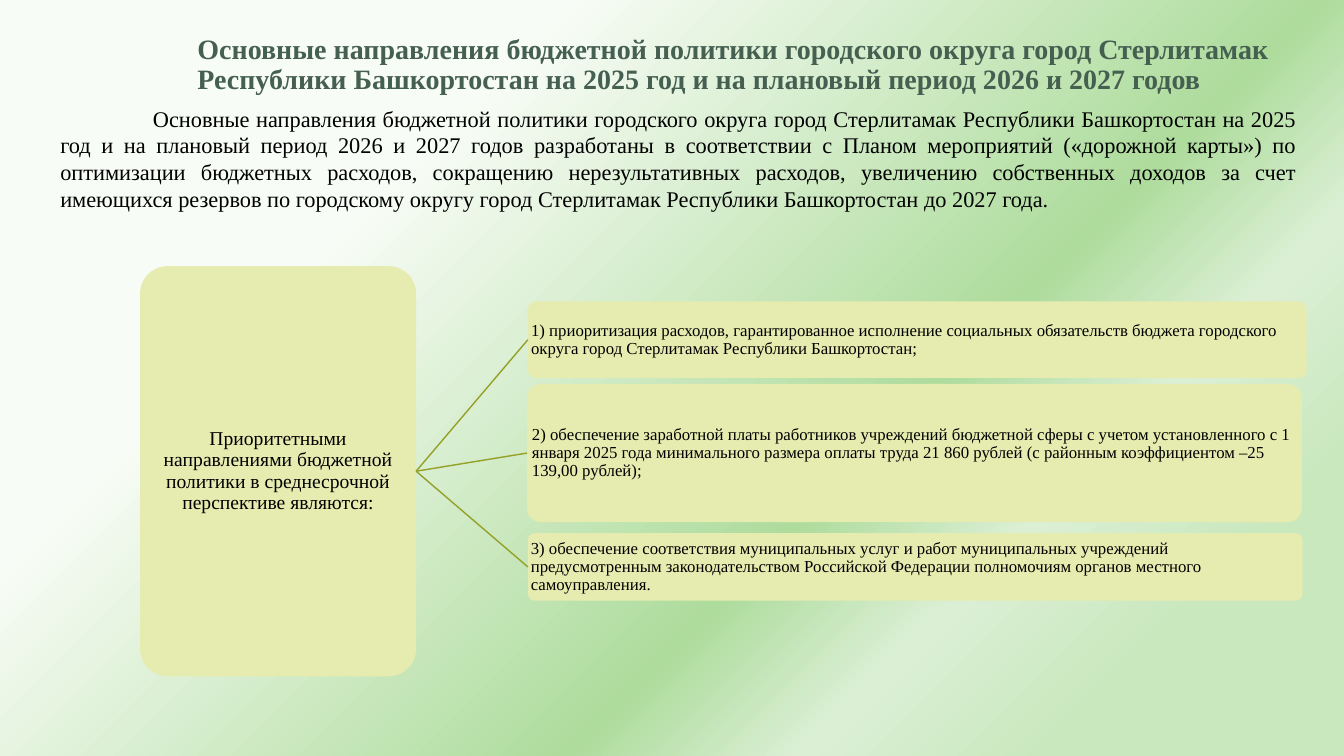
"""Build a slide on the budget policy priorities of Sterlitamak."""
import copy

import pptx
import pptx.util
from pptx.dml.color import RGBColor
from pptx.enum.shapes import MSO_CONNECTOR, MSO_SHAPE
from pptx.enum.text import MSO_ANCHOR, MSO_AUTO_SIZE, PP_ALIGN
from pptx.oxml.ns import qn

color = RGBColor.from_string
deck = pptx.Presentation()
deck.slide_width = pptx.util.Inches(13.34)
deck.slide_height = pptx.util.Inches(7.5)
page = deck.slides.add_slide(deck.slide_layouts[5])


def area(left, top, width, height):
    """Turn percentages of the slide's size into lengths."""
    across, down = deck.slide_width / 100, deck.slide_height / 100
    return [int(left * across), int(top * down), int(width * across), int(height * down)]


def write(frame, text, size, align, spacing=0.9, ink="000000", bold=False):
    """Fill a text frame with one formatted paragraph."""
    frame.word_wrap = True
    frame.auto_size = MSO_AUTO_SIZE.NONE
    para = frame.paragraphs[0]
    para.alignment = align
    para.line_spacing = spacing
    span = para.add_run()
    span.text = text
    span.font.name = "Times New Roman"
    span.font.size = pptx.util.Pt(size)
    span.font.bold = bold
    span.font.color.rgb = color(ink)
    return para


backdrop = page.background.fill
backdrop.gradient()
backdrop.gradient_angle = 315
stop_list = backdrop.gradient_stops[0]._gs.getparent()
for extra in range(2):
    stop_list.append(copy.deepcopy(stop_list[0]))
shades = [(0.27, "F8FCF6"), (0.63, "AEDC9D"), (0.74, "DBEFD4"), (0.86, "C9E8BE")]
for stop, (position, shade) in zip(backdrop.gradient_stops, shades):
    stop.position = position
    stop.color.rgb = color(shade)

title = page.shapes.title
title.left, title.top, title.width, title.height = area(13.94, 3.87, 82.23, 9.47)
title.text_frame.vertical_anchor = MSO_ANCHOR.MIDDLE
write(
    title.text_frame,
    "Основные направления бюджетной политики городского округа город Стерлитамак "
    "Республики Башкортостан на 2025 год и на плановый период 2026 и 2027 годов",
    20, PP_ALIGN.LEFT, ink="455F51", bold=True,
)

intro = page.shapes.add_textbox(*area(3.75, 13.2, 93.48, 19.33))
para = write(
    intro.text_frame,
    "Основные направления бюджетной политики городского округа город Стерлитамак "
    "Республики Башкортостан на 2025 год и на плановый период 2026 и 2027 годов "
    "разработаны в соответствии с Планом мероприятий («дорожной карты») по оптимизации "
    "бюджетных расходов, сокращению нерезультативных расходов, увеличению собственных "
    "доходов за счет имеющихся резервов по городскому округу город Стерлитамак "
    "Республики Башкортостан до 2027 года.",
    16, PP_ALIGN.JUSTIFY, spacing=1.0,
)
para._p.get_or_add_pPr().set("indent", str(pptx.util.Inches(0.92)))

cards = [
    ((10.42, 35.2, 20.54, 54.27), 14, PP_ALIGN.CENTER,
     "Приоритетными направлениями бюджетной политики в среднесрочной перспективе являются:"),
    ((39.28, 39.87, 57.95, 10.13), 12, PP_ALIGN.LEFT,
     "1) приоритизация расходов, гарантированное исполнение социальных обязательств "
     "бюджета городского округа город Стерлитамак Республики Башкортостан;"),
    ((39.21, 50.8, 57.65, 18.27), 12, PP_ALIGN.LEFT,
     "2) обеспечение заработной платы работников учреждений бюджетной сферы с учетом "
     "установленного с 1 января 2025 года минимального размера оплаты труда 21 860 рублей "
     "(с районным коэффициентом –25 139,00 рублей);"),
    ((39.28, 70.53, 57.65, 8.93), 12, PP_ALIGN.LEFT,
     "3) обеспечение соответствия муниципальных услуг и работ муниципальных учреждений "
     "предусмотренным законодательством Российской Федерации полномочиям органов "
     "местного самоуправления."),
]
boxes = []
for shares, size, align, text in cards:
    box = page.shapes.add_shape(MSO_SHAPE.ROUNDED_RECTANGLE, *area(*shares))
    box.adjustments[0] = 0.1
    box.shadow.inherit = False
    box.fill.solid()
    box.fill.fore_color.rgb = color("E6ECB0")
    box.line.fill.background()
    frame = box.text_frame
    frame.vertical_anchor = MSO_ANCHOR.MIDDLE
    frame.margin_left = frame.margin_right = pptx.util.Inches(0.01)
    frame.margin_top = frame.margin_bottom = pptx.util.Inches(0.01)
    write(frame, text, size, align)
    boxes.append(box)

goal, *priorities = boxes
for priority in priorities:
    branch = page.shapes.add_connector(MSO_CONNECTOR.STRAIGHT, 0, 0, 0, 0)
    branch.begin_connect(goal, 3)
    branch.end_connect(priority, 1)
    branch.line.color.rgb = color("94A027")
    branch.line.width = pptx.util.Pt(1)
    properties = branch._element.spPr
    properties.append(properties.makeelement(qn("a:effectLst"), {}))

deck.save("out.pptx")
